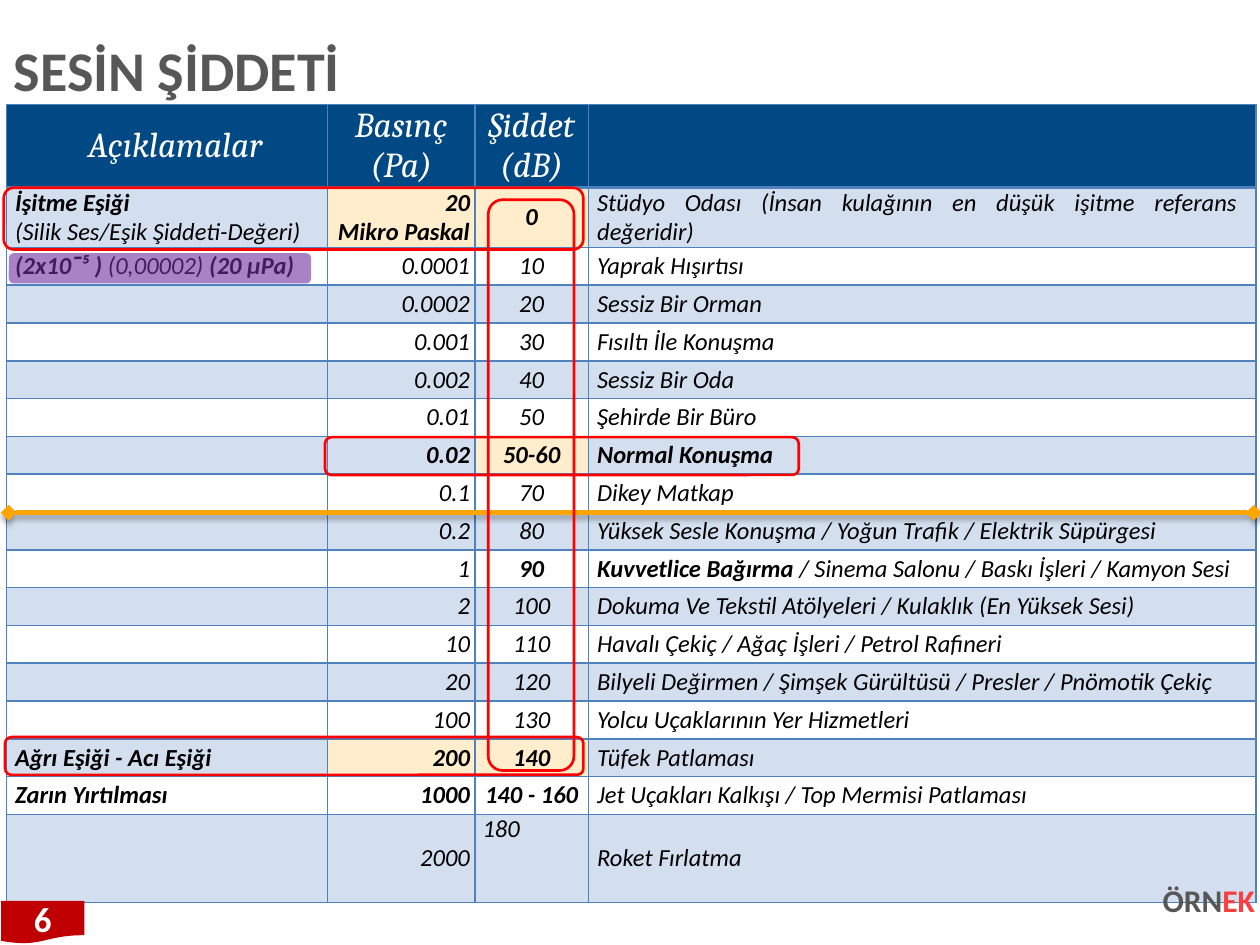
"""Builds the slide on sound levels: a table of pressures and decibels with highlights."""
from lxml import etree
from pptx import Presentation
from pptx.dml.color import RGBColor
from pptx.enum.shapes import MSO_CONNECTOR, MSO_SHAPE
from pptx.enum.text import MSO_ANCHOR, MSO_AUTO_SIZE, PP_ALIGN
from pptx.oxml import parse_xml
from pptx.oxml.ns import nsdecls, qn
from pptx.util import Inches, Pt

CENTER, RIGHT, LEFT, JUSTIFY = PP_ALIGN.CENTER, PP_ALIGN.RIGHT, PP_ALIGN.LEFT, PP_ALIGN.JUSTIFY
MIDDLE, TOP = MSO_ANCHOR.MIDDLE, MSO_ANCHOR.TOP
ROUNDED, DOCUMENT = MSO_SHAPE.ROUNDED_RECTANGLE, MSO_SHAPE.FLOWCHART_DOCUMENT
STRAIGHT = MSO_CONNECTOR.STRAIGHT
NO_AUTOFIT = MSO_AUTO_SIZE.NONE

WHITE = RGBColor(0xFF, 0xFF, 0xFF)
BLACK = RGBColor(0x00, 0x00, 0x00)
GRAY = RGBColor(0x57, 0x57, 0x57)
NAVY = RGBColor(0x00, 0x49, 0x85)
PALE_BLUE = RGBColor(0xD3, 0xDF, 0xEE)
CREAM = RGBColor(0xFF, 0xED, 0xCC)
BORDER = RGBColor(0x4F, 0x81, 0xBD)
RED = RGBColor(0xFF, 0x00, 0x00)
CORAL = RGBColor(0xFB, 0x3E, 0x3E)
DARK_RED = RGBColor(0xC0, 0x00, 0x00)
ORANGE = RGBColor(0xFE, 0xA5, 0x01)
PURPLE = RGBColor(0x70, 0x30, 0xA0)

COLUMN_WIDTHS = [2.55, 1.17, 0.9, 5.3]
ROW_HEIGHTS = [0.66, 0.47] + [0.3] * 15 + [0.7]
ALIGNMENTS = [JUSTIFY, RIGHT, CENTER, JUSTIFY]
SIDE_MARGINS = [0.07, 0.04, 0.04, 0.07]
CREAM_CELLS = {(1, 1), (1, 2), (7, 2), (15, 1), (15, 2)}

# Text between asterisks is bold.
ROWS = [
    ["Açıklamalar", "Basınç\n(Pa)", "Şiddet\n(dB)", ""],
    ["*İşitme Eşiği*\n(Silik Ses/Eşik Şiddeti-Değeri)", "*20*\n*Mikro Paskal*", "*0*",
     "Stüdyo Odası (İnsan kulağının en düşük işitme referans değeridir)"],
    ["*(2x10ˉ⁵ ) *(0,00002) *(20 μPa)*", "0.0001", "10", "Yaprak Hışırtısı"],
    ["", "0.0002", "20", "Sessiz Bir Orman"],
    ["", "0.001", "30", "Fısıltı İle Konuşma"],
    ["", "0.002", "40", "Sessiz Bir Oda"],
    ["", "0.01", "50", "Şehirde Bir Büro"],
    ["", "*0.02*", "*50-60*", "*Normal Konuşma*"],
    ["", "0.1", "70", "Dikey Matkap"],
    ["", "0.2", "80", "Yüksek Sesle Konuşma / Yoğun Trafik / Elektrik Süpürgesi"],
    ["", "1", "*90*", "*Kuvvetlice Bağırma */ Sinema Salonu / Baskı İşleri / Kamyon Sesi"],
    ["", "2", "100", "Dokuma Ve Tekstil Atölyeleri / Kulaklık (En Yüksek Sesi)"],
    ["", "10", "110", "Havalı Çekiç / Ağaç İşleri / Petrol Rafineri"],
    ["", "20", "120", "Bilyeli Değirmen / Şimşek Gürültüsü / Presler / Pnömotik Çekiç"],
    ["", "100", "130", "Yolcu Uçaklarının Yer Hizmetleri"],
    ["*Ağrı Eşiği - Acı Eşiği*", "*200*", "*140*", "Tüfek Patlaması"],
    ["*Zarın Yırtılması*", "*1000*", "*140 - 160*", "Jet Uçakları Kalkışı / Top Mermisi Patlaması"],
    ["", "2000", "180", "Roket Fırlatma"],
]


def add_span(para, text, color, **formats):
    span = para.add_run()
    span.text = text
    span.font.color.rgb = color
    for name, value in formats.items():
        setattr(span.font, name, value)


def add_box(preset, left, top, width, height):
    box = page.shapes.add_shape(preset, Inches(left), Inches(top), Inches(width), Inches(height))
    box.shadow.inherit = False
    box.fill.background()
    box.line.fill.background()
    return box


deck = Presentation()
deck.slide_width, deck.slide_height = Inches(10), Inches(7.5)
page = deck.slides.add_slide(deck.slide_layouts[5])

frame = page.shapes.add_table(len(ROWS), len(COLUMN_WIDTHS), Inches(0.05), Inches(0.83),
                              Inches(sum(COLUMN_WIDTHS)), Inches(sum(ROW_HEIGHTS)))
table = frame.table
table.first_row = table.horz_banding = False
for column, width in zip(table.columns, COLUMN_WIDTHS):
    column.width = Inches(width)
for row, height in zip(table.rows, ROW_HEIGHTS):
    row.height = Inches(height)

for row_index, texts in enumerate(ROWS):
    header = row_index == 0
    face = {"name": "Cambria", "size": Pt(20)} if header else {"name": "Calibri", "size": Pt(14)}
    for column_index, text in enumerate(texts):
        cell = table.cell(row_index, column_index)
        cell.vertical_anchor = MIDDLE
        cell.margin_top = cell.margin_bottom = 0
        cell.margin_left = cell.margin_right = Inches(SIDE_MARGINS[column_index])
        for side in ("lnL", "lnR", "lnT", "lnB"):
            thick = (row_index, side) in {(0, "lnB"), (1, "lnT")}
            cell._tc.get_or_add_tcPr().append(parse_xml(
                f'<a:{side} {nsdecls("a")} w="{Pt(2.25 if thick else 1)}"><a:solidFill>'
                f'<a:srgbClr val="{BORDER}"/></a:solidFill></a:{side}>'))
        if header or row_index % 2 or (row_index, column_index) in CREAM_CELLS:
            cell.fill.solid()
            cell.fill.fore_color.rgb = (NAVY if header else CREAM
                                        if (row_index, column_index) in CREAM_CELLS else PALE_BLUE)
        else:
            cell.fill.background()
        for line_index, line in enumerate(text.split("\n")):
            para = cell.text_frame.add_paragraph() if line_index else cell.text_frame.paragraphs[0]
            para.alignment = CENTER if header else ALIGNMENTS[column_index]
            for part_index, part in enumerate(line.split("*")):
                if part:
                    add_span(para, part, WHITE if header else BLACK, italic=True,
                             bold=part_index % 2 == 1, **face)
            if not line:
                etree.SubElement(para._p, qn("a:endParaRPr"), sz="1400")

table.cell(0, 0).margin_left = Inches(0.2)
table.cell(1, 3).margin_right = Inches(0.15)
rocket_level = table.cell(len(ROWS) - 1, 2)
rocket_level.vertical_anchor = TOP
rocket_level.margin_left = Inches(0.06)
rocket_level.text_frame.paragraphs[0].alignment = LEFT

title = page.shapes.title
label = page.shapes.add_textbox(Inches(8.96), Inches(6.99), Inches(1), Inches(0.36))
badge = add_box(DOCUMENT, 0.01, 7.15, 0.66, 0.34)
badge.fill.solid()
badge.fill.fore_color.rgb = DARK_RED
for name, value in {"left": 0.11, "top": 0.23, "width": 9.64, "height": 0.71}.items():
    setattr(title, name, Inches(value))

text_boxes = [
    (title, LEFT, MIDDLE, 0.05, 32, [("SESİN ŞİDDETİ", GRAY)]),
    (label, RIGHT, TOP, 0, 18, [("ÖRN", GRAY), ("EK", CORAL)]),
    (badge, CENTER, MIDDLE, 0, 20, [("6", WHITE)]),
]
for box, alignment, anchor, margin, size, spans in text_boxes:
    formats = {"word_wrap": True, "auto_size": NO_AUTOFIT, "vertical_anchor": anchor,
               "margin_left": 0, "margin_right": 0,
               "margin_top": Inches(margin), "margin_bottom": Inches(margin)}
    for name, value in formats.items():
        setattr(box.text_frame, name, value)
    para = box.text_frame.paragraphs[0]
    para.alignment = alignment
    for text, color in spans:
        add_span(para, text, color, name="Calibri", size=Pt(size), bold=True)
title.text_frame.paragraphs[0].line_spacing = 0.9

divider = page.shapes.add_connector(STRAIGHT, Inches(0.07), Inches(4.07), Inches(9.95), Inches(4.07))
divider.line.color.rgb = ORANGE
divider.line.width = Pt(3)
for end in ("headEnd", "tailEnd"):
    etree.SubElement(divider.line._get_or_add_ln(), qn(f"a:{end}"), type="diamond")
divider._element.spPr.append(parse_xml(
    f'<a:effectLst {nsdecls("a")}><a:outerShdw blurRad="{Pt(3.1)}" dist="{Pt(1.8)}" dir="5400000">'
    '<a:srgbClr val="000000"><a:alpha val="35000"/></a:srgbClr></a:outerShdw></a:effectLst>'))

highlights = [
    (0.03, 1.49, 4.6, 0.49, 0),
    (2.58, 3.47, 3.76, 0.3, 0),
    (0.04, 5.85, 4.59, 0.3, 0),
    (1.95, 3.51, 4.53, 0.68, 270),
]
for left, top, width, height, rotation in highlights:
    outline = add_box(ROUNDED, left, top, width, height)
    outline.rotation = rotation
    outline.line.color.rgb = RED
    outline.line.width = Pt(1.5)

marker = add_box(ROUNDED, 0.07, 2.01, 2.4, 0.24)
marker.fill.solid()
marker.fill.fore_color.rgb = PURPLE
marker_color = marker._element.spPr.find(qn("a:solidFill")).find(qn("a:srgbClr"))
etree.SubElement(marker_color, qn("a:alpha"), val="60000")

deck.save("out.pptx")
